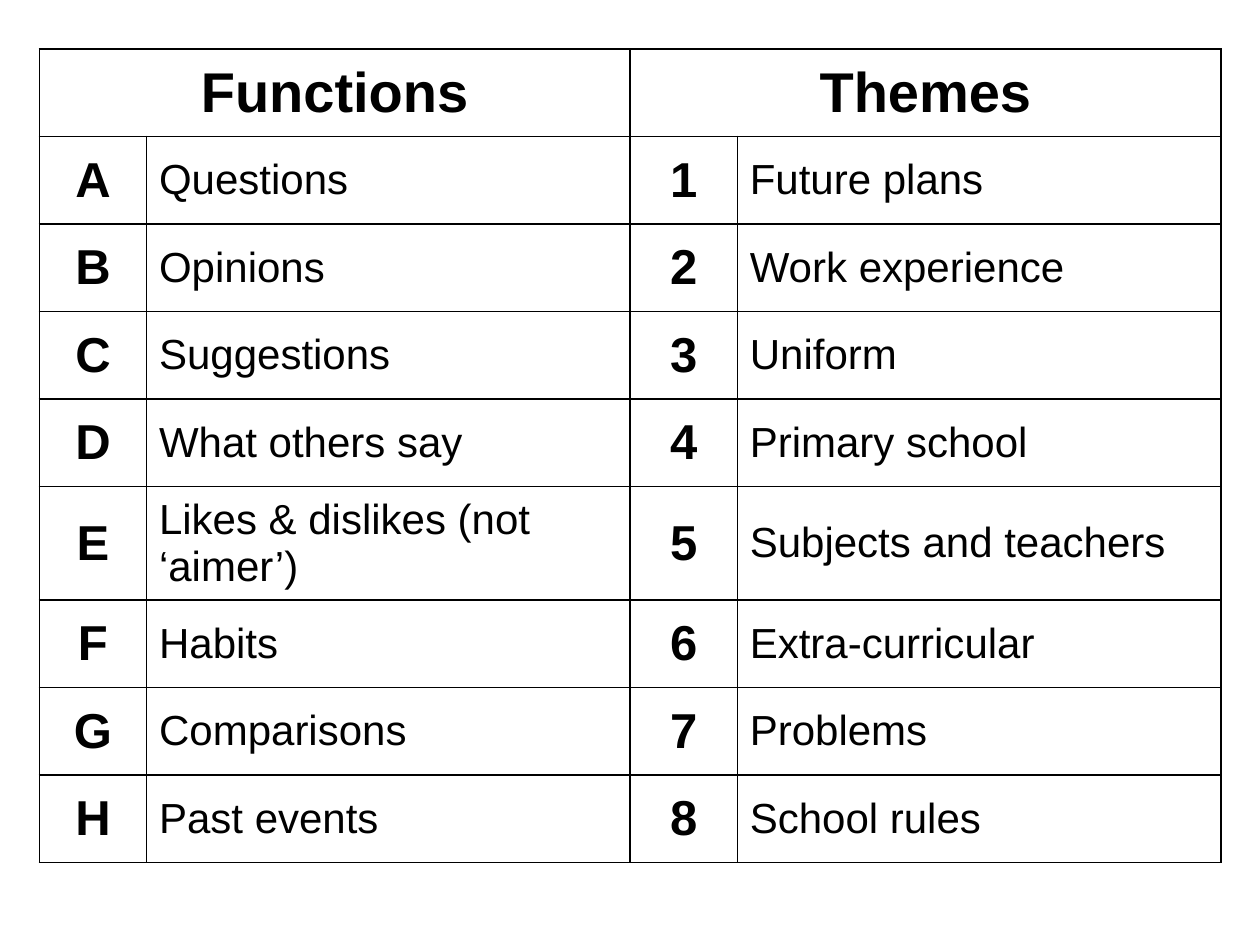
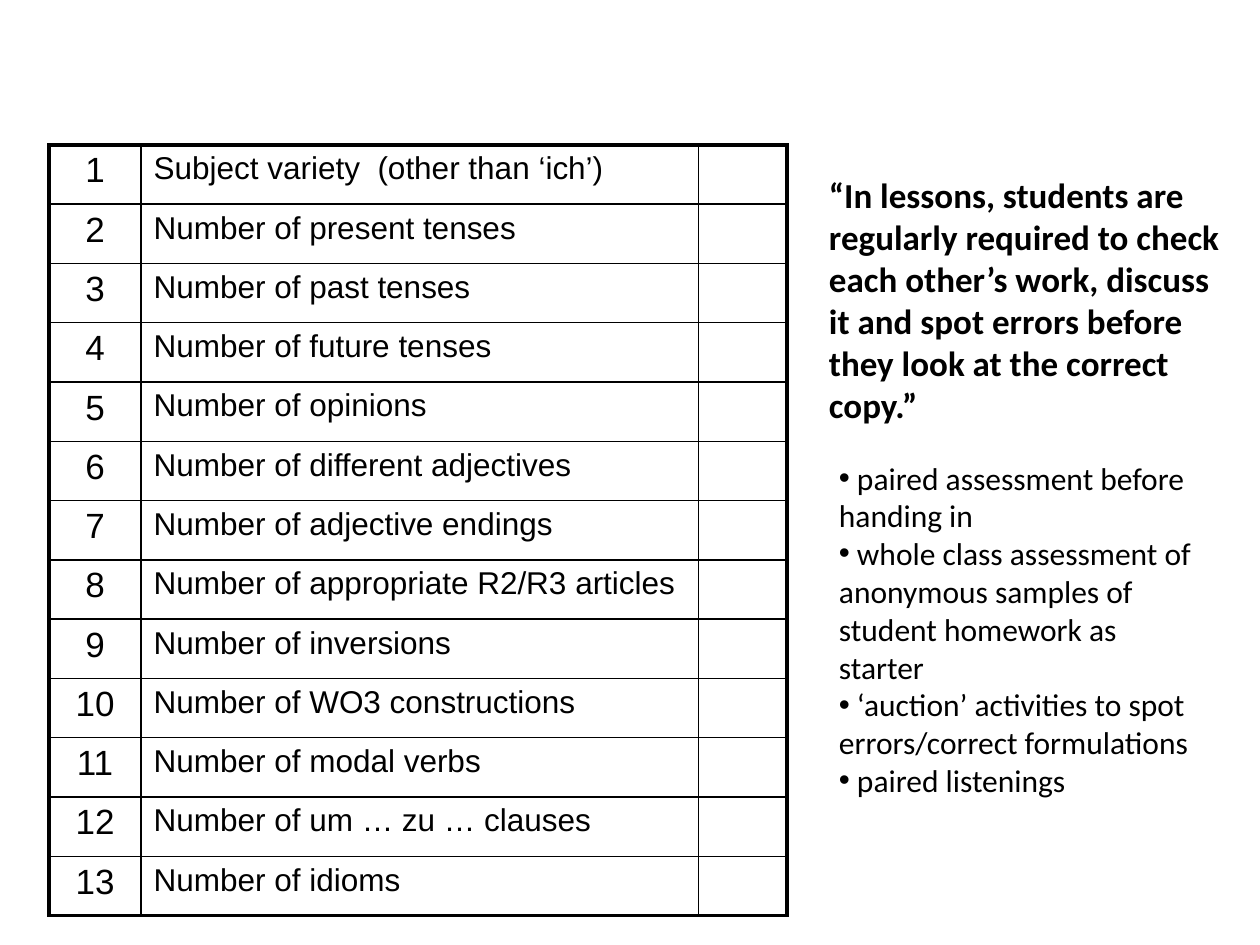
from lxml import etree
from pptx import Presentation
from pptx.dml.color import RGBColor
from pptx.enum.text import MSO_ANCHOR, MSO_AUTO_SIZE, PP_ALIGN
from pptx.oxml.ns import qn
from pptx.util import Pt

CENTER, LEFT = PP_ALIGN.CENTER, PP_ALIGN.LEFT
MIDDLE, TOP = MSO_ANCHOR.MIDDLE, MSO_ANCHOR.TOP
GROW = MSO_AUTO_SIZE.SHAPE_TO_FIT_TEXT
BLACK = "000000"
THIN, THICK = 1, 2.25


def add_run(p, text, size, font="Arial", bold=False, color=BLACK):
    r = p.add_run()
    r.text = text
    r.font.size = Pt(size)
    r.font.name = font
    r.font.bold = bold
    r.font.color.rgb = RGBColor.from_string(color)


def add_grid(slide, left, top, widths, heights, outline):
    table = slide.shapes.add_table(
        len(heights), len(widths), Pt(left), Pt(top),
        Pt(sum(widths)), Pt(sum(heights))).table
    table.first_row = table.horz_banding = False
    for col, width in zip(table.columns, widths):
        col.width = Pt(width)
    for row, height in zip(table.rows, heights):
        row.height = Pt(height)
    for i in range(len(heights)):
        for j in range(len(widths)):
            cell = table.cell(i, j)
            tc_pr = cell._tc.get_or_add_tcPr()
            on_edge = {"a:lnL": j == 0, "a:lnR": j == len(widths) - 1,
                       "a:lnT": i == 0, "a:lnB": i == len(heights) - 1}
            for side, outer in on_edge.items():
                ln = etree.SubElement(tc_pr, qn(side))
                ln.set("w", str(Pt(outline if outer else THIN)))
                fill = etree.SubElement(ln, qn("a:solidFill"))
                etree.SubElement(fill, qn("a:srgbClr")).set("val", BLACK)
            cell.fill.background()
    return table


prs = Presentation()
prs.slide_width, prs.slide_height = Pt(720), Pt(540)
blank = prs.slide_layouts[6]

s = prs.slides.add_slide(blank)
columns = [
    ("Functions", "ABCDEFGH",
     ["Questions", "Opinions", "Suggestions", "What others say",
      "Likes & dislikes (not ‘aimer’)", "Habits", "Comparisons", "Past events"]),
    ("Themes", "12345678",
     ["Future plans", "Work experience", "Uniform", "Primary school",
      "Subjects and teachers", "Extra-curricular", "Problems", "School rules"]),
]
heights = [50] * 5 + [65] + [50] * 3
table = add_grid(s, 22.5, 28, [61.2, 276.4] * 2, heights, THIN)
for k, (heading, keys, entries) in enumerate(columns):
    col = 2 * k
    table.cell(0, col).merge(table.cell(0, col + 1))
    cells = [(0, col, heading, 32, True, CENTER)]
    for i, (key, entry) in enumerate(zip(keys, entries), 1):
        cells.append((i, col, key, 28, True, CENTER))
        cells.append((i, col + 1, entry, 24, False, LEFT))
    for i, j, text, size, bold, align in cells:
        cell = table.cell(i, j)
        cell.vertical_anchor = MIDDLE
        p = cell.text_frame.paragraphs[0]
        p.alignment = align
        add_run(p, text, size, bold=bold)

s = prs.slides.add_slide(blank)
criteria = [
    "Subject variety  (other than ‘ich’)",
    "Number of present tenses",
    "Number of past tenses",
    "Number of future tenses",
    "Number of opinions",
    "Number of different adjectives",
    "Number of adjective endings",
    "Number of appropriate R2/R3 articles",
    "Number of inversions",
    "Number of WO3 constructions",
    "Number of modal verbs",
    "Number of um … zu … clauses",
    "Number of idioms",
]
table = add_grid(s, 28, 82.8, [52.6, 318.6, 50.6], [33.9] * len(criteria), THICK)
for i, criterion in enumerate(criteria):
    for j, (text, size, align) in enumerate([(str(i + 1), 20, CENTER),
                                             (criterion, 18, LEFT)]):
        cell = table.cell(i, j)
        cell.vertical_anchor = TOP
        p = cell.text_frame.paragraphs[0]
        p.alignment = align
        add_run(p, text, size)

quote = ["“In lessons, students are regularly required to check each other’s "
         "work, discuss it and spot errors before they look at the correct copy.”"]
activities = [
    " paired assessment before handing in",
    " whole class assessment of anonymous samples of student homework as starter",
    " ‘auction’ activities to spot errors/correct formulations",
    " paired listenings",
]
for left, top, width, height, lines, size, is_quote in [
        (466.6, 95.8, 242, 152.6, quote, 20, True),
        (472.3, 258.5, 219.6, 247, activities, 18, False)]:
    sp = s.shapes.add_textbox(Pt(left), Pt(top), Pt(width), Pt(height))
    tf = sp.text_frame
    tf.word_wrap = True
    tf.auto_size = GROW
    for i, line in enumerate(lines):
        p = tf.add_paragraph() if i else tf.paragraphs[0]
        add_run(p, line, size, "Calibri", is_quote)
        if not is_quote:
            p_pr = p._p.get_or_add_pPr()
            etree.SubElement(p_pr, qn("a:buFont")).set("typeface", "Arial")
            etree.SubElement(p_pr, qn("a:buChar")).set("char", "•")

prs.save("out.pptx")
